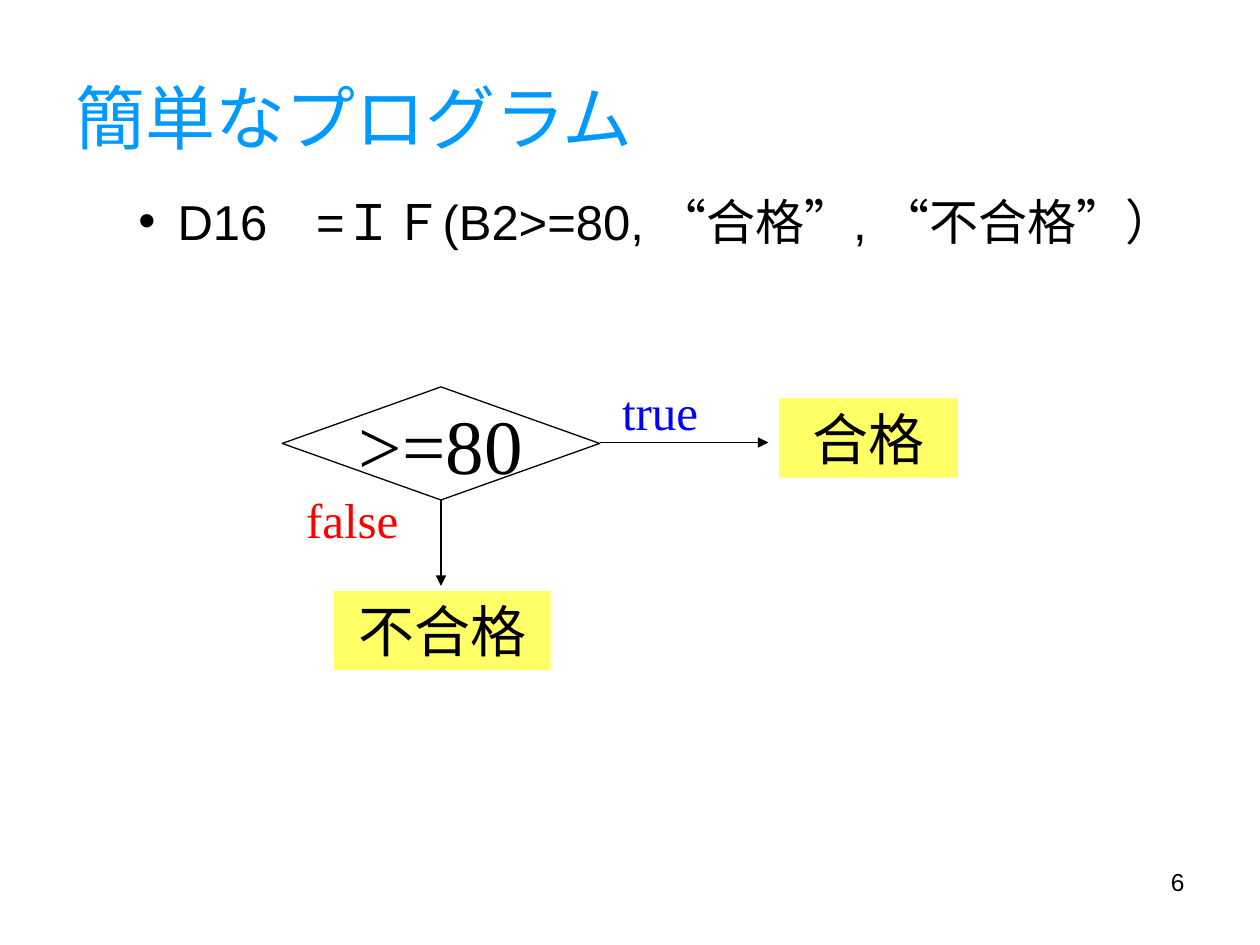
from dataclasses import dataclass

from lxml import etree
from pptx import Presentation
from pptx.dml.color import RGBColor
from pptx.enum import shapes, text
from pptx.oxml import ns
from pptx.util import Cm, Pt


@dataclass(frozen=True)
class Theme:
    sans: str = "Arial"
    quote: str = "Lato"
    serif: str = "Times New Roman"
    black: str = "000000"
    title_blue: str = "0099FF"
    true_blue: str = "0000FF"
    false_red: str = "FF0000"
    result_fill: str = "FFFF66"
    title: int = 40
    body: int = 28
    result: int = 32
    condition: int = 44
    number: int = 14


THEME = Theme()
TITLE_ONLY = 5
LEFT, CENTER, RIGHT = text.PP_ALIGN.LEFT, text.PP_ALIGN.CENTER, text.PP_ALIGN.RIGHT
TOP, MIDDLE = text.MSO_ANCHOR.TOP, text.MSO_ANCHOR.MIDDLE


def cm(*lengths):
    return [Cm(length) for length in lengths]


def write(box, *parts, size, font=THEME.serif, color=THEME.black,
          align=LEFT, anchor=TOP, wrap=True):
    """Fill a box with one paragraph; a part is a string or (string, font)."""
    frame = box.text_frame
    frame.auto_size = text.MSO_AUTO_SIZE.NONE
    frame.word_wrap = wrap
    frame.vertical_anchor = anchor
    para = frame.paragraphs[0]
    para.alignment = align
    for part in parts:
        words, face = (part, font) if isinstance(part, str) else part
        span = para.add_run()
        span.text = words
        span.font.name = face
        span.font.size = Pt(size)
        span.font.color.rgb = RGBColor.from_string(color)
    return para


def add_label(page, place, *parts, **style):
    return write(page.shapes.add_textbox(*cm(*place)), *parts, **style)


def add_bullet(para, left, hanging):
    props = para._p.get_or_add_pPr()
    props.set("marL", str(Cm(left)))
    props.set("indent", str(-Cm(hanging)))
    etree.SubElement(props, ns.qn("a:buFont")).set("typeface", THEME.sans)
    etree.SubElement(props, ns.qn("a:buChar")).set("char", "•")


def add_block(page, kind, place, words, fill=None, line=None, **style):
    block = page.shapes.add_shape(kind, *cm(*place))
    block.shadow.inherit = False
    if fill:
        block.fill.solid()
        block.fill.fore_color.rgb = RGBColor.from_string(fill)
    else:
        block.fill.background()
    if line:
        block.line.color.rgb = RGBColor.from_string(line)
        block.line.width = Pt(0.75)
    else:
        block.line.fill.background()
    write(block, words, align=CENTER, **style)


def add_result(page, place, words):
    add_block(page, shapes.MSO_SHAPE.RECTANGLE, place, words,
              fill=THEME.result_fill, size=THEME.result)


def add_arrow(page, start, end):
    arrow = page.shapes.add_connector(shapes.MSO_CONNECTOR.STRAIGHT, *cm(*start, *end))
    arrow.line.color.rgb = RGBColor.from_string(THEME.black)
    arrow.line.width = Pt(1)
    head = etree.SubElement(arrow.line._get_or_add_ln(), ns.qn("a:tailEnd"))
    head.set("type", "triangle")
    etree.SubElement(arrow._element.spPr, ns.qn("a:effectLst"))


def add_title(page, place, words):
    title = page.shapes.title
    title.left, title.top, title.width, title.height = cm(*place)
    write(title, words, size=THEME.title, font=THEME.sans,
          color=THEME.title_blue, anchor=MIDDLE)


def add_flowchart(page):
    left, top, width, height = 5.69, 7.8, 6.4, 2.28
    axis = left + width / 2
    add_block(page, shapes.MSO_SHAPE.FLOWCHART_DECISION, (left, top, width, height),
              ">=80", line=THEME.black, size=THEME.condition, anchor=MIDDLE, wrap=False)

    add_arrow(page, (axis, top + height), (axis, 11.81))
    add_label(page, (5.92, 9.75, 2.59, 1.45), "false",
              size=THEME.body, color=THEME.false_red)
    add_result(page, (6.73, 11.91, 4.37, 1.6), "不合格")

    add_arrow(page, (left + width, 8.92), (15.49, 8.92))
    add_label(page, (12.29, 7.57, 2.59, 1.45), "true",
              size=THEME.body, color=THEME.true_blue)
    add_result(page, (15.7, 8.03, 3.61, 1.6), "合格")


def main():
    deck = Presentation()
    deck.slide_width, deck.slide_height = cm(25.4, 19.05)
    page = deck.slides.add_slide(deck.slide_layouts[TITLE_ONLY])

    add_title(page, (1.27, 0.76, 22.86, 3.18), "簡単なプログラム")
    open_quote = ("“", THEME.quote)
    formula = add_label(page, (1.27, 3.73, 22.86, 14.81),
                        "D16　=ＩＦ(B2>=80, ", open_quote, "合格”, ",
                        open_quote, "不合格”）",
                        size=THEME.body, font=THEME.sans)
    add_bullet(formula, left=2.06, hanging=0.79)
    add_flowchart(page)
    add_label(page, (18.21, 17.35, 5.92, 1.32), "6",
              size=THEME.number, font=THEME.sans, align=RIGHT)

    deck.save("out.pptx")


if __name__ == "__main__":
    main()
